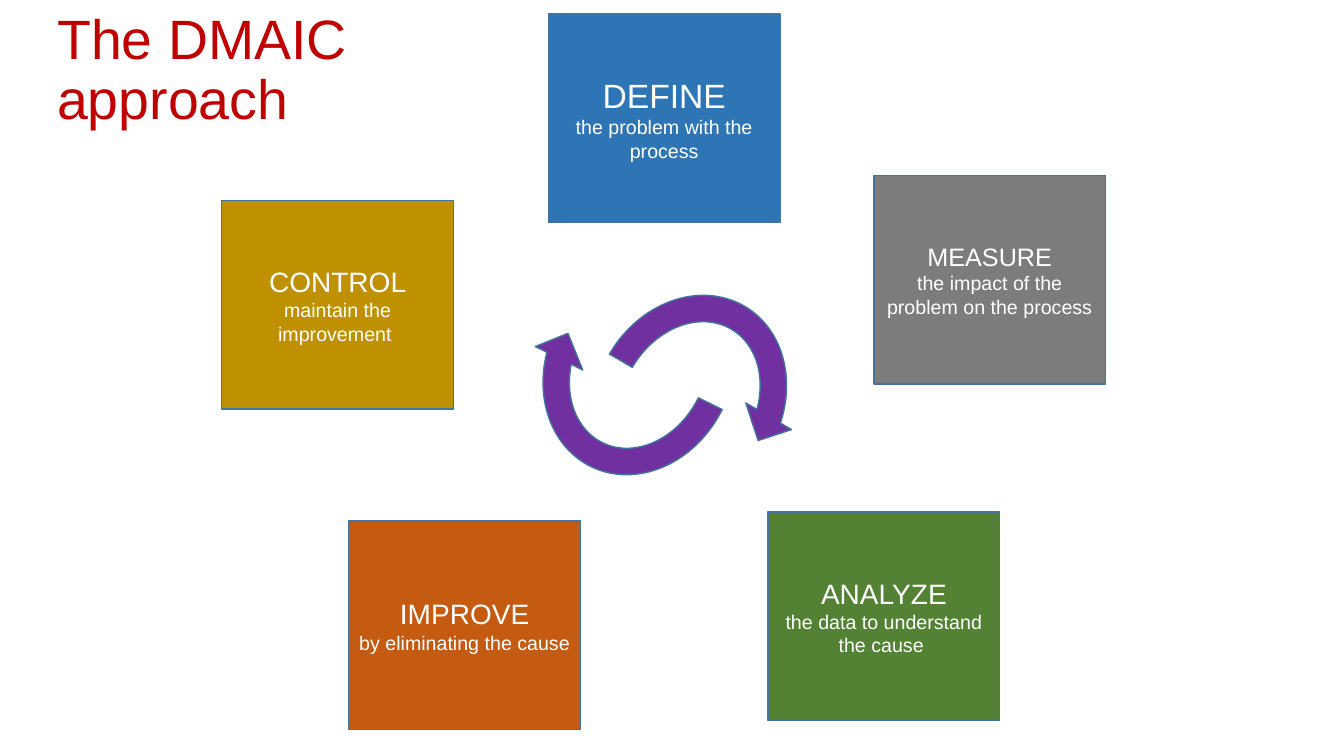
from pptx import Presentation
from pptx.dml.color import RGBColor
from pptx.enum.shapes import MSO_SHAPE
from pptx.enum.text import MSO_ANCHOR, PP_ALIGN
from pptx.util import Pt

RECTANGLE = MSO_SHAPE.RECTANGLE
CIRCULAR_ARROW = MSO_SHAPE.CIRCULAR_ARROW
MIDDLE = MSO_ANCHOR.MIDDLE
LEFT, CENTER = PP_ALIGN.LEFT, PP_ALIGN.CENTER

COLOURS = {
    "title": "C00000",
    "text": "FFFFFF",
    "outline": "43739E",
    "define": "2E75B6",
    "measure": "7C7C7C",
    "analyze": "548235",
    "improve": "C55A11",
    "control": "BF9000",
    "arrow": "7030A0",
}
STEP_SIZE = (165.6, 149)
STEPS = [
    ("DEFINE", "the problem with the process", 24, (233.3, 0)),
    ("MEASURE", "the impact of the problem on the process", 18, (465.8, 115.2)),
    ("ANALYZE", "the data to understand the cause ", 20, (390.2, 355.7)),
    ("IMPROVE", "by eliminating the cause ", 20, (90.7, 362.2)),
    ("CONTROL", "maintain the improvement ", 20, (0, 133.2)),
]
ARROW_SIZE = (151.2, 175)
ARROWS = [((36, 23), 30.2), ((0, 0), 206.3)]


def colour(name):
    """Return the named colour."""
    return RGBColor.from_string(COLOURS[name])


def write_paragraph(paragraph, text, size, colour_name, **formats):
    """Write one run of Arial text and apply paragraph formats."""
    run = paragraph.add_run()
    run.text = text
    for name, value in {"name": "Arial", "size": Pt(size)}.items():
        setattr(run.font, name, value)
    run.font.color.rgb = colour(colour_name)
    for name, value in formats.items():
        setattr(paragraph, name, value)


def add_outlined_shape(shapes, kind, box, fill_name):
    """Add a filled preset shape with the common outline."""
    shape = shapes.add_shape(kind, *map(Pt, box))
    shape.shadow.inherit = False
    shape.fill.solid()
    shape.fill.fore_color.rgb = colour(fill_name)
    shape.line.color.rgb = colour("outline")
    shape.line.width = Pt(1)
    return shape


def add_title(slide, box):
    """Place the slide title in its box."""
    frame = slide.shapes.add_textbox(*map(Pt, box)).text_frame
    for name, value in {"word_wrap": True, "vertical_anchor": MIDDLE}.items():
        setattr(frame, name, value)
    write_paragraph(frame.paragraphs[0], "The DMAIC approach", 39.6, "title",
                    alignment=LEFT, line_spacing=0.9)


def add_steps(slide, left, top):
    """Place the five step squares as a group around the cycle."""
    group = slide.shapes.add_group_shape()
    for heading, detail, heading_size, (x, y) in STEPS:
        box = (left + x, top + y, *STEP_SIZE)
        shape = add_outlined_shape(group.shapes, RECTANGLE, box, heading.lower())
        frame = shape.text_frame
        for name, value in {"word_wrap": True, "vertical_anchor": MIDDLE}.items():
            setattr(frame, name, value)
        write_paragraph(frame.paragraphs[0], heading, heading_size, "text",
                        alignment=CENTER)
        write_paragraph(frame.add_paragraph(), detail, 14, "text",
                        alignment=CENTER)


def add_cycle(slide, left, top):
    """Place the two circular arrows as a group."""
    group = slide.shapes.add_group_shape()
    for (x, y), rotation in ARROWS:
        box = (left + x, top + y, *ARROW_SIZE)
        arrow = add_outlined_shape(group.shapes, CIRCULAR_ARROW, box, "arrow")
        arrow.rotation = rotation


def main():
    """Build and save the DMAIC slide."""
    presentation = Presentation()
    presentation.slide_width = Pt(960)
    presentation.slide_height = Pt(540)
    slide = presentation.slides.add_slide(presentation.slide_layouts[6])
    add_title(slide, (33.8, 17.3, 325.4, 67.7))
    add_steps(slide, 158.4, 10.1)
    add_cycle(slide, 380.9, 175.7)
    presentation.save("out.pptx")


if __name__ == "__main__":
    main()
